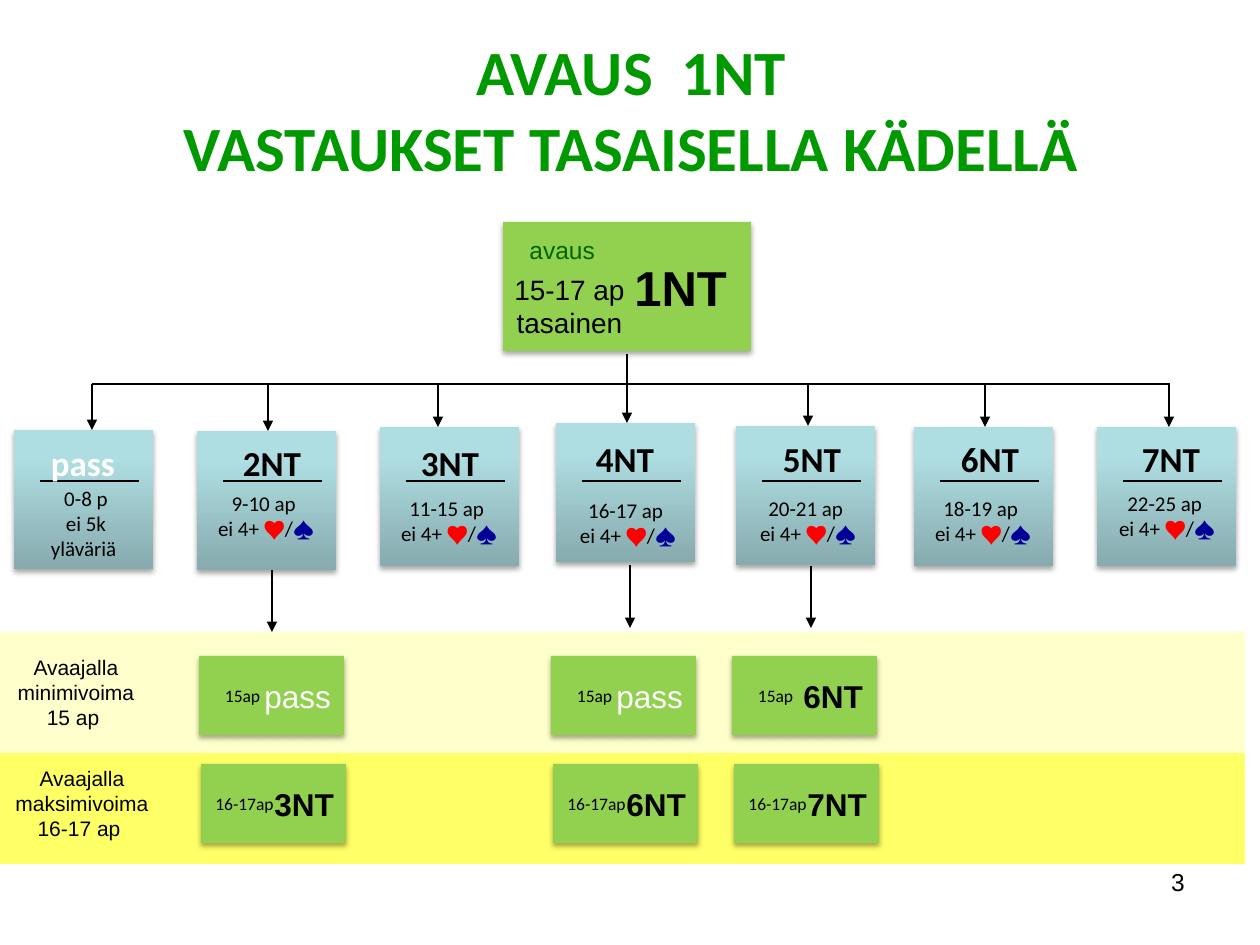
from copy import deepcopy

from pptx import Presentation
from pptx.dml.color import RGBColor
from pptx.enum.shapes import MSO_CONNECTOR, MSO_SHAPE
from pptx.enum.text import MSO_AUTO_SIZE, PP_ALIGN
from pptx.oxml import parse_xml
from pptx.oxml.ns import nsdecls, qn
from pptx.util import Pt

SCALE = 914400 / 126
INK = {
    "black": "000000", "white": "FFFFFF", "title": "009900", "open": "006600",
    "box": "92D050", "low": "FFFFCC", "high": "FFFF66",
    "heart": "FF0000", "spade": "000099",
    "dark": "87ABAE", "mid": "AFDEE2", "light": "AFE0E4",
}
CARDS = [
    ("pass", "0-8 p\nei 5k yläväriä ", 14, 430, 92, 83, 435, 86, 479),
    ("2NT", "9-10 ap ", 197, 431, 268, 272, 435, 266, 484),
    ("3NT", "11-15 ap ", 380, 427, 438, 450, 435, 449, 489),
    ("4NT", "16-17 ap ", 556, 423, 627, 625, 431, 628, 491),
    ("5NT", "20-21 ap ", 736, 426, 808, 812, 431, 808, 489),
    ("6NT", "18-19 ap ", 914, 427, 985, 990, 431, 983, 489),
    ("7NT", "22-25 ap ", 1097, 427, 1169, 1171, 431, 1167, 484),
]
REPLIES = [
    (199, "pass", "3NT", 272, 570, 632),
    (551, "pass", "6NT", 630, 565, 628),
    (732, "6NT", "7NT", 811, 566, 628),
]
BAR = 384


def px(num):
    return round(num * SCALE)


def hue(name):
    return RGBColor.from_string(INK[name])


class Board:
    def __init__(self, slide):
        self.slide = slide
        self.shapes = slide.shapes

    def style(self, para, size, font, ink, bold, align):
        para.font.size = Pt(size)
        para.font.name = font
        para.font.bold = bold
        para.font.color.rgb = hue(ink)
        para.alignment = align

    def title(self, text, *place):
        head = self.shapes.title
        head.left, head.top, head.width, head.height = map(px, place)
        head.text_frame.auto_size = MSO_AUTO_SIZE.NONE
        para = head.text_frame.paragraphs[0]
        para.text = text
        self.style(para, 36, "Calibri", "title", True, PP_ALIGN.CENTER)

    def text(self, lines, *place, size=12, font="Arial", ink="black",
             bold=False, align=PP_ALIGN.CENTER):
        frame = self.shapes.add_textbox(*map(px, place)).text_frame
        frame.word_wrap = True
        for spot, line in enumerate(lines):
            para = frame.add_paragraph() if spot else frame.paragraphs[0]
            para.text = line
            self.style(para, size, font, ink, bold, align)
        return frame

    def rect(self, ink, *place, shade=True):
        box = self.shapes.add_shape(MSO_SHAPE.RECTANGLE, *map(px, place))
        box.line.fill.background()
        box.shadow.inherit = False
        if ink == "blend":
            self.blend(box)
        else:
            box.fill.solid()
            box.fill.fore_color.rgb = hue(ink)
        if shade:
            box._element.spPr.find(qn("a:effectLst")).append(parse_xml(
                f'<a:outerShdw {nsdecls("a")} blurRad="39370" dist="22860" dir="5400000" '
                'rotWithShape="0"><a:srgbClr val="000000"><a:alpha val="35000"/>'
                '</a:srgbClr></a:outerShdw>'))

    def blend(self, box):
        box.fill.gradient()
        box.fill.gradient_angle = 90
        steps = box._element.spPr.find(".//" + qn("a:gsLst"))
        steps.append(deepcopy(steps[-1]))
        marks = [(0, "dark"), (0.8, "mid"), (1, "light")]
        for stop, (spot, ink) in zip(box.fill.gradient_stops, marks):
            stop.position = spot
            stop.color.rgb = hue(ink)

    def line(self, *ends, head=False):
        wire = self.shapes.add_connector(MSO_CONNECTOR.STRAIGHT, *map(px, ends))
        wire.line.width = Pt(0.75)
        wire.line.color.rgb = hue("black")
        if head:
            wire.line._get_or_add_ln().append(
                parse_xml(f'<a:tailEnd {nsdecls("a")} type="triangle"/>'))
        wire._element.spPr.append(parse_xml(f'<a:effectLst {nsdecls("a")}/>'))

    def card(self, bid, note, left, top, stem, head_x, head_y, note_x, note_y):
        self.line(stem, BAR, stem, top, head=True)
        self.rect("blend", left, top, 139, 139)
        self.line(left + 26, 481, left + 125, 481)
        is_pass = bid == "pass"
        self.text([bid], head_x - 58, head_y, 116, 55, size=20, font="Calibri",
                  ink="white" if is_pass else "black", bold=True)
        wide = 102 if is_pass else 142
        full = note if is_pass else note + "\nei 4+ "
        frame = self.text([full], note_x - wide // 2, note_y, wide, 63, font="Calibri")
        if not is_pass:
            for sign, ink in (("♥", "heart"), ("/", "black"), ("♠", "spade")):
                run = frame.paragraphs[0].add_run()
                run.text = sign
                run.font.color.rgb = hue(ink)

    def reply(self, left, top, points, bid, shift):
        is_pass = bid == "pass"
        self.rect("box", left, top, 145, 79)
        self.text([points], left - 9, top + 23, 105, 34, size=10, font="Calibri")
        self.text([bid], left + shift, top + 15, 102, 50, size=18,
                  ink="white" if is_pass else "black", bold=not is_pass,
                  align=PP_ALIGN.LEFT)


def main():
    deck = Presentation()
    deck.slide_width, deck.slide_height = px(1260), px(945)
    board = Board(deck.slides.add_slide(deck.slide_layouts[5]))

    board.rect("high", -1, 743, 1246, 121, shade=False)
    board.rect("low", -1, 632, 1246, 121, shade=False)
    board.title("AVAUS  1NT\nVASTAUKSET TASAISELLA KÄDELLÄ", 15, 26, 1232, 165)

    board.rect("box", 503, 222, 248, 129)
    board.text(["1NT"], 622, 251, 134, 72, size=28, bold=True, align=PP_ALIGN.LEFT)
    board.text(["15-17 ap\ntasainen"], 500, 266, 139, 81, size=16)
    board.text(["avaus"], 517, 229, 118, 43, size=14, ink="open", align=PP_ALIGN.LEFT)

    board.line(627, 354, 627, BAR)
    board.line(92, BAR, 1170, BAR)
    for card in CARDS:
        board.card(*card)

    for left, low, high, stem, start, end in REPLIES:
        board.line(stem, start, stem, end, head=True)
        board.reply(left, 656, "15ap", low, 53 if low == "pass" else 59)
        board.reply(left + 2, 764, "16-17ap", high, 61)

    board.text(["Avaajalla\nminimivoima", "15 ap "], 0, 648, 152, 89)
    board.text(["Avaajalla\nmaksimivoima", "16-17 ap "], 0, 759, 164, 89)
    board.text(["3"], 903, 861, 294, 65, size=14, align=PP_ALIGN.RIGHT)
    deck.save("out.pptx")


if __name__ == "__main__":
    main()
